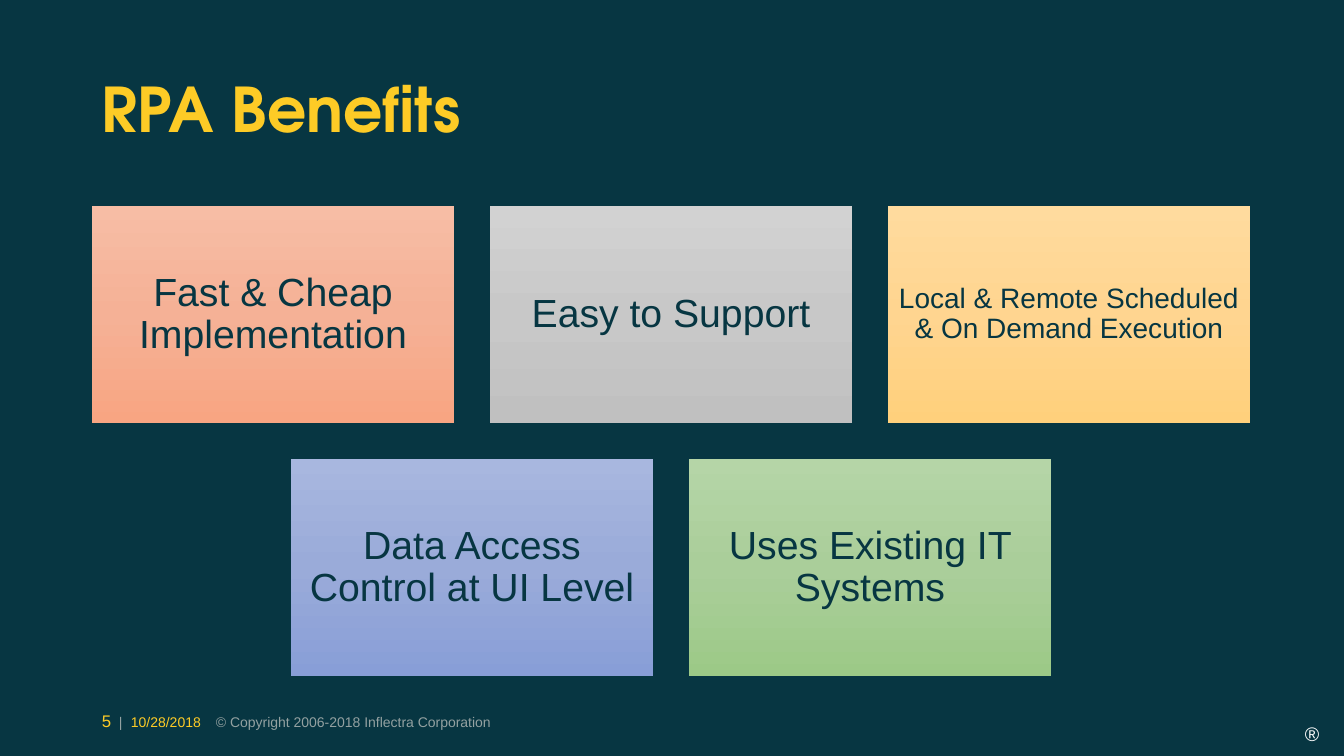
from copy import deepcopy
from dataclasses import dataclass

from lxml.etree import SubElement
from pptx import Presentation
from pptx.dml.color import RGBColor
from pptx.enum.shapes import MSO_SHAPE as Preset
from pptx.enum.text import MSO_ANCHOR as Anchor, PP_ALIGN as Align
from pptx.oxml.ns import qn
from pptx.util import Emu, Pt

EMU_PER_PX = 914400 / 100.8


@dataclass(frozen=True)
class Theme:
    background: str = "073642"
    accent: str = "FDCB26"
    muted: str = "93A1A1"
    light: str = "FFFFFF"
    body_font: str = "Arial"
    title_font: str = "TeX Gyre Adventor"
    title_size: int = 44
    tile_size: int = 28
    small_tile_size: int = 20
    mark_size: int = 14
    number_size: int = 12
    footer_size: int = 10
    coral: tuple = ("F7BDA5", "F5B196", "F8A582")
    gray: tuple = ("D2D2D2", "C8C8C8", "C0C0C0")
    amber: tuple = ("FFDB9E", "FFD590", "FFD07C")
    blue: tuple = ("A8B7DF", "9AABD9", "889ED7")
    green: tuple = ("B5D5A7", "AACE9A", "9CC987")


THEME = Theme()

BENEFIT_ROWS = [
    [
        ("Fast & Cheap Implementation", THEME.coral, THEME.tile_size, 12),
        ("Easy to Support", THEME.gray, THEME.tile_size, 12),
        ("Local & Remote Scheduled & On Demand Execution", THEME.amber,
         THEME.small_tile_size, 8),
    ],
    [
        ("Data Access Control at UI Level", THEME.blue, THEME.tile_size, 12),
        ("Uses Existing IT Systems", THEME.green, THEME.tile_size, 12),
    ],
]


def px(length):
    return Emu(round(length * EMU_PER_PX))


def add_span(para, text, size, color, font=THEME.body_font, bold=False):
    span = para.add_run()
    span.text = text
    span.font.size = Pt(size)
    span.font.name = font
    span.font.bold = bold
    span.font.color.rgb = RGBColor.from_string(color)


def set_insets(frame, horizontal, vertical):
    frame.margin_left = frame.margin_right = px(horizontal)
    frame.margin_top = frame.margin_bottom = px(vertical)


def add_text_box(page, box, horizontal=10, vertical=5):
    frame = page.shapes.add_textbox(*map(px, box)).text_frame
    frame.word_wrap = True
    set_insets(frame, horizontal, vertical)
    return frame


def add_title(page, box):
    frame = add_text_box(page, box)
    frame.vertical_anchor = Anchor.MIDDLE
    para = frame.paragraphs[0]
    para.line_spacing = 0.9
    add_span(para, "RPA Benefits", THEME.title_size, THEME.accent,
             THEME.title_font, bold=True)


def fill_downward(shape, colors):
    shape.fill.gradient()
    shape.fill.gradient_angle = 270
    stop_list = shape._element.spPr.find(qn("a:gradFill")).find(qn("a:gsLst"))
    stop_list.insert(1, deepcopy(stop_list[0]))
    for index, (stop, color) in enumerate(zip(shape.fill.gradient_stops, colors)):
        stop.position = index / (len(colors) - 1)
        stop.color.rgb = RGBColor.from_string(color)


def add_tile(page, box, benefit):
    text, colors, size, inset = benefit
    tile = page.shapes.add_shape(Preset.RECTANGLE, *map(px, box))
    tile.shadow.inherit = False
    tile.line.fill.background()
    fill_downward(tile, colors)
    frame = tile.text_frame
    frame.word_wrap = True
    frame.vertical_anchor = Anchor.MIDDLE
    set_insets(frame, inset, inset)
    para = frame.paragraphs[0]
    para.alignment = Align.CENTER
    para.line_spacing = 0.9
    add_span(para, text, size, THEME.background)


def add_benefits(page, box, gap=36):
    left, top, width, height = box
    columns = max(map(len, BENEFIT_ROWS))
    tile_width = (width - gap * (columns - 1)) // columns
    tile_height = (height - gap * (len(BENEFIT_ROWS) - 1)) // len(BENEFIT_ROWS)
    for row, benefits in enumerate(BENEFIT_ROWS):
        row_width = len(benefits) * (tile_width + gap) - gap
        row_left = left + (width - row_width) // 2
        for column, benefit in enumerate(benefits):
            add_tile(page, (row_left + column * (tile_width + gap),
                            top + row * (tile_height + gap),
                            tile_width, tile_height), benefit)


def add_footer(page, box):
    para = add_text_box(page, box).paragraphs[0]
    tabs = SubElement(para._p.get_or_add_pPr(), qn("a:tabLst"))
    for position in (17, 29, 114):
        SubElement(tabs, qn("a:tab"), pos=str(px(position)), algn="l")
    add_span(para, "5", THEME.number_size, THEME.accent)
    add_span(para, "\t|", THEME.footer_size, THEME.muted)
    add_span(para, "\t10/28/2018", THEME.footer_size, THEME.accent)
    add_span(para, "\t© Copyright 2006-2018 Inflectra Corporation",
             THEME.footer_size, THEME.muted)


def add_registered_mark(page, box):
    para = add_text_box(page, box, 0, 0).paragraphs[0]
    add_span(para, "®", THEME.mark_size, THEME.light)


def build_benefits_slide(deck):
    page = deck.slides.add_slide(deck.slide_layouts[6])
    page.background.fill.solid()
    page.background.fill.fore_color.rgb = RGBColor.from_string(THEME.background)
    add_registered_mark(page, (1305, 722, 18, 24))
    add_footer(page, (92, 706, 753, 30))
    add_title(page, (92, 40, 1159, 146))
    add_benefits(page, (92, 206, 1158, 470))


def main():
    deck = Presentation()
    deck.slide_width, deck.slide_height = px(1344), px(756)
    build_benefits_slide(deck)
    deck.save("out.pptx")


if __name__ == "__main__":
    main()
